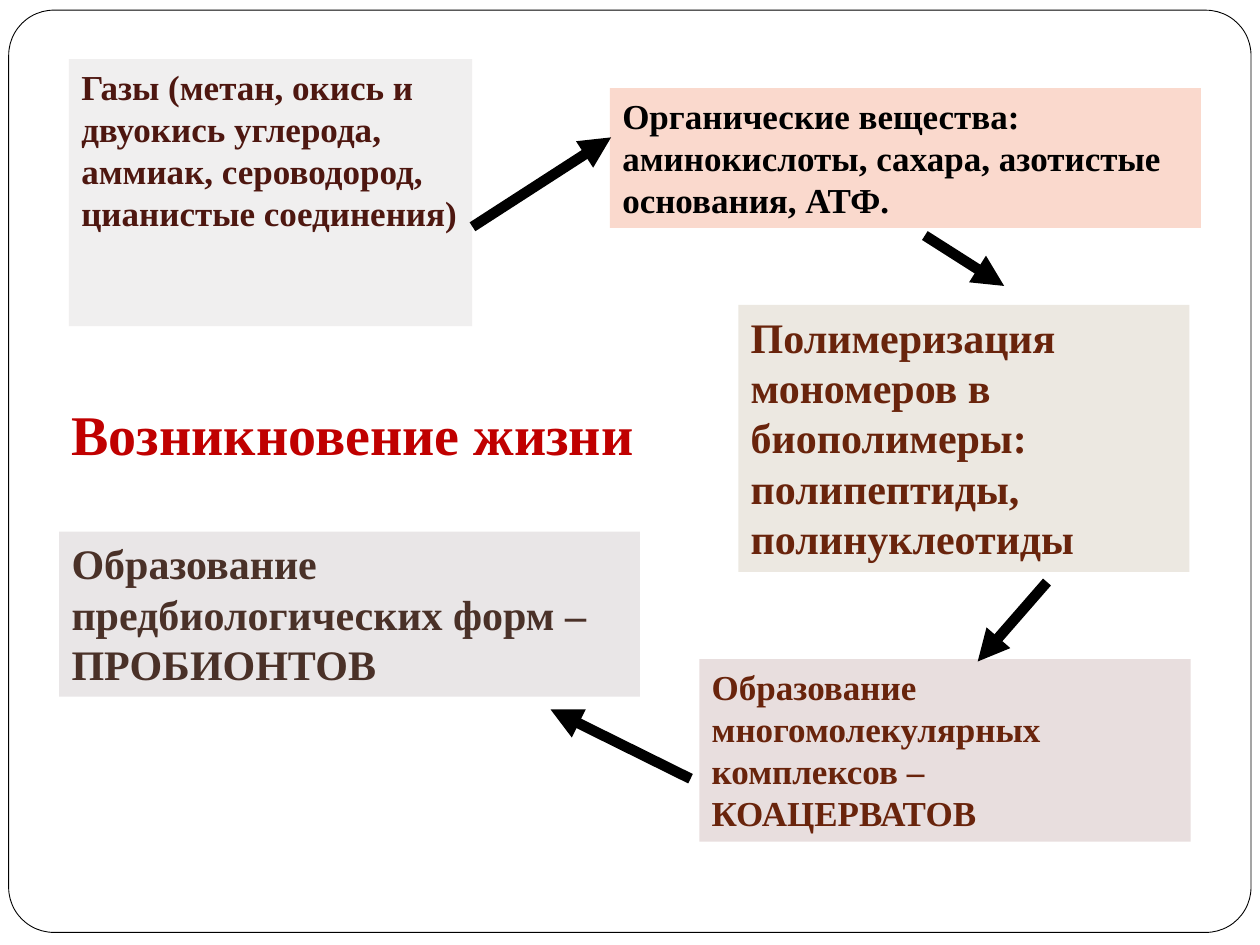
import pptx
import pptx.util
import pptx.dml.color
import pptx.enum.shapes
import pptx.enum.text
import pptx.oxml
import pptx.oxml.ns
from pptx.util import Pt

THEME = {
    "font": "Times New Roman",
    "paper": "FFFFFF", "ink": "000000", "title": "C00000",
    "small": 20, "large": 24, "heading": 32,
    "frame_line": 0.5, "arrow_line": 6,
}

# Content: text, (left, top, width, height), fill, text colour, type size
STAGES = [
    ("Газы (метан, окись и двуокись углерода, аммиак, сероводород, цианистые соединения)",
     (39.4, 33.8, 230.4, 152.6), "F0EFEF", "4E1710", "small"),
    ("Органические вещества: аминокислоты, сахара, азотистые основания, АТФ.",
     (348.5, 50.4, 337.7, 79.9), "FAD9CD", "000000", "small"),
    ("Полимеризация мономеров в биополимеры: полипептиды, полинуклеотиды",
     (421.9, 174.2, 257.8, 152.6), "ECE8E1", "69240C", "large"),
    ("Образование многомолекулярных комплексов – КОАЦЕРВАТОВ",
     (399.6, 376.6, 280.8, 104.4), "E8DEDE", "69240C", "small"),
    ("Образование предбиологических форм – ПРОБИОНТОВ",
     (33.8, 303.8, 331.9, 94.3), "E9E6E7", "4A3128", "large"),
]
HEADING = ("Возникновение жизни", (33.8, 224.6, 368.6, 46.1))
FRAME = (5, 5.8, 709.9, 527)
FRAME_ROUNDING = 0.049

# Each arrow leads from one stage to the next: start x, y, end x, y
ARROWS = [
    (270, 129.6, 349.2, 78.5),
    (528.5, 134.6, 573.8, 163.4),
    (598.3, 332.6, 558.7, 378),
    (394.6, 445, 314.6, 405.4),
]


def rgb(value):
    return pptx.dml.color.RGBColor.from_string(value)


def points(values):
    return [Pt(value) for value in values]


def write(shape, wording, size, colour):
    frame = shape.text_frame
    layout = {
        "word_wrap": True,
        "vertical_anchor": pptx.enum.text.MSO_ANCHOR.TOP,
        "auto_size": pptx.enum.text.MSO_AUTO_SIZE.NONE,
    }
    for name, value in layout.items():
        setattr(frame, name, value)
    paragraph = frame.paragraphs[0]
    paragraph.alignment = pptx.enum.text.PP_ALIGN.LEFT
    run = paragraph.add_run()
    run.text = wording
    for name, value in {"name": THEME["font"], "size": Pt(size), "bold": True}.items():
        setattr(run.font, name, value)
    run.font.color.rgb = rgb(colour)


def add_panel(slide, kind, place, fill):
    panel = slide.shapes.add_shape(kind, *points(place))
    panel.shadow.inherit = False
    panel.fill.solid()
    panel.fill.fore_color.rgb = rgb(fill)
    panel.line.fill.background()
    return panel


def add_arrow(slide, ends):
    arrow = slide.shapes.add_connector(
        pptx.enum.shapes.MSO_CONNECTOR.STRAIGHT, *points(ends))
    arrow.line.width = Pt(THEME["arrow_line"])
    arrow.line.color.rgb = rgb(THEME["ink"])
    head = pptx.oxml.parse_xml(
        f'<a:tailEnd {pptx.oxml.ns.nsdecls("a")} type="triangle"/>')
    arrow.line._get_or_add_ln().append(head)
    no_shadow = pptx.oxml.parse_xml(f'<a:effectLst {pptx.oxml.ns.nsdecls("a")}/>')
    arrow._element.spPr.append(no_shadow)


def main():
    deck = pptx.Presentation()
    deck.slide_width, deck.slide_height = Pt(720), Pt(540)
    slide = deck.slides.add_slide(deck.slide_layouts[6])
    shapes = pptx.enum.shapes.MSO_SHAPE

    # Rounded frame
    frame = add_panel(slide, shapes.ROUNDED_RECTANGLE, FRAME, THEME["paper"])
    frame.adjustments[0] = FRAME_ROUNDING
    frame.line.color.rgb = rgb(THEME["ink"])
    frame.line.width = Pt(THEME["frame_line"])

    # Stages
    for wording, place, fill, colour, size in STAGES:
        stage = add_panel(slide, shapes.RECTANGLE, place, fill)
        write(stage, wording, THEME[size], colour)

    # Arrows between stages
    for ends in ARROWS:
        add_arrow(slide, ends)

    # Heading
    wording, place = HEADING
    heading = slide.shapes.add_textbox(*points(place))
    write(heading, wording, THEME["heading"], THEME["title"])

    deck.save("out.pptx")


if __name__ == "__main__":
    main()
